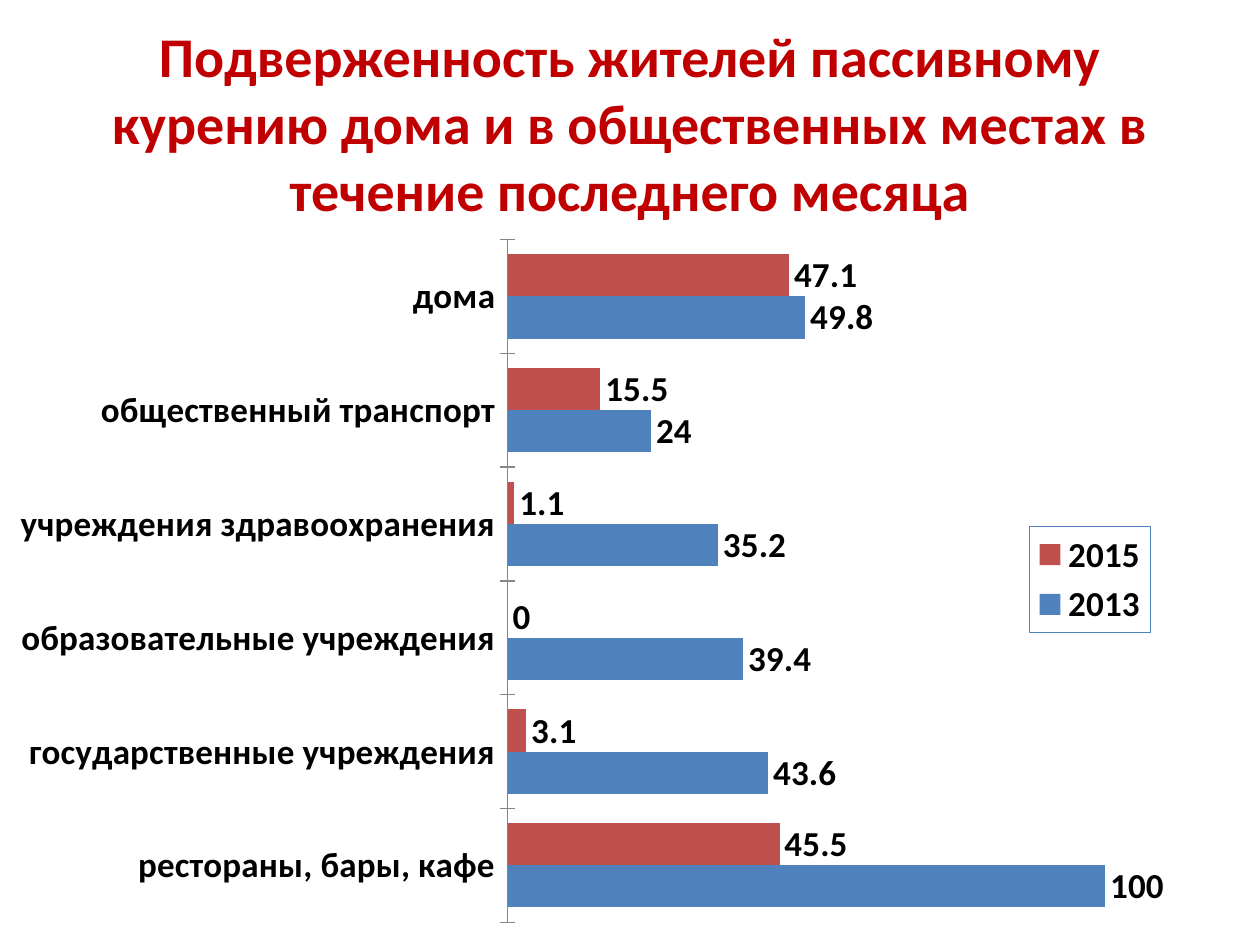
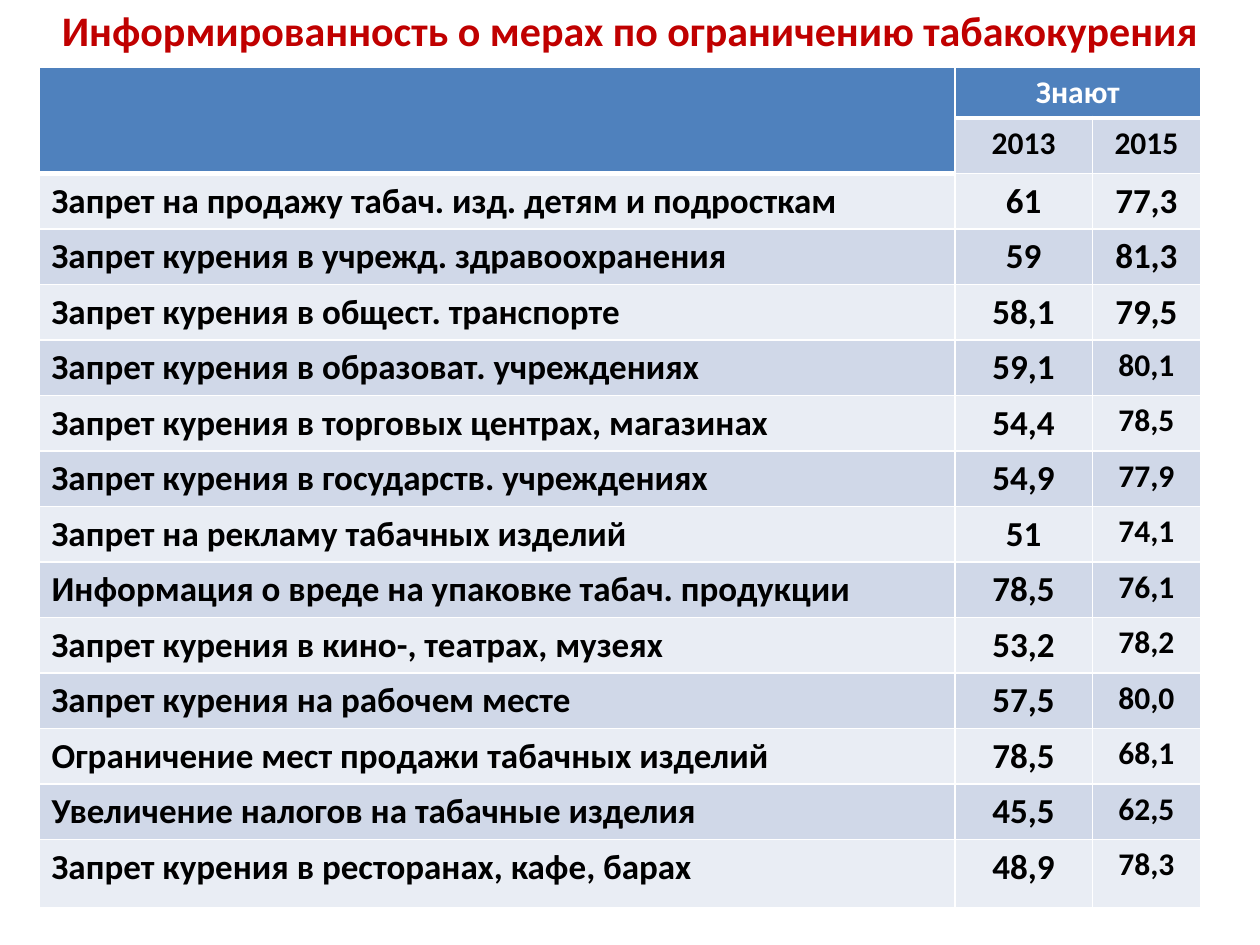
from lxml import etree
from pptx import Presentation
from pptx.chart.data import CategoryChartData
from pptx.dml.color import RGBColor
from pptx.enum import chart as ch, text
from pptx.oxml import parse_xml
from pptx.oxml.ns import nsdecls, qn
from pptx.util import Pt

COLORS = {"title": "C00000", "text": "000000", "white": "FFFFFF", "blue": "4F81BD",
          "red": "C0504D", "axis": "868686", "dark": "D0D8E8", "light": "E9EDF4"}
FONT = "Calibri"

PLACES = ["рестораны, бары, кафе", "государственные учреждения", "образовательные учреждения",
          "учреждения здравоохранения", "общественный транспорт", "дома"]
EXPOSURE = [("2013", "blue", [100, 43.6, 39.4, 35.2, 24, 49.8]),
            ("2015", "red", [45.5, 3.1, 0, 1.1, 15.5, 47.1])]

MEASURES = [
    ("Запрет на продажу табач. изд. детям и подросткам", "61", "77,3"),
    ("Запрет курения в учрежд. здравоохранения", "59", "81,3"),
    ("Запрет курения в общест. транспорте", "58,1", "79,5"),
    ("Запрет курения в образоват. учреждениях", "59,1", "80,1"),
    ("Запрет курения в торговых центрах, магазинах", "54,4", "78,5"),
    ("Запрет курения в государств. учреждениях", "54,9", "77,9"),
    ("Запрет на рекламу табачных изделий", "51", "74,1"),
    ("Информация о вреде на упаковке табач. продукции", "78,5", "76,1"),
    ("Запрет курения в кино-, театрах, музеях", "53,2", "78,2"),
    ("Запрет курения на рабочем месте", "57,5", "80,0"),
    ("Ограничение мест продажи табачных изделий", "78,5", "68,1"),
    ("Увеличение налогов на табачные изделия", "45,5", "62,5"),
    ("Запрет курения в ресторанах, кафе, барах", "48,9", "78,3"),
]
LARGE_2015_ROWS = 3


def rgb(name):
    """Return a palette colour."""
    return RGBColor.from_string(COLORS[name])


def style_font(font, size, color):
    """Apply the bold deck font."""
    font.name, font.size, font.bold = FONT, Pt(size), True
    font.color.rgb = rgb(color)


def write(tf, content, size, color, align):
    """Write one styled run into a text frame."""
    p = tf.paragraphs[0]
    p.alignment = align
    r = p.add_run()
    r.text = content
    style_font(r.font, size, color)


def add_titled_slide(prs, title, box, size):
    """Add a title-only slide with its title placed in the box."""
    s = prs.slides.add_slide(prs.slide_layouts[5])
    sp = s.shapes.title
    sp.left, sp.top, sp.width, sp.height = (Pt(v) for v in box)
    tf = sp.text_frame
    tf.word_wrap = True
    tf.auto_size = text.MSO_AUTO_SIZE.NONE
    tf.vertical_anchor = text.MSO_ANCHOR.MIDDLE
    write(tf, title, size, "title", text.PP_ALIGN.CENTER)
    return s


def manual_layout(x, y, w, h, inner=False):
    """Build a manual chart layout from fractions of the chart."""
    target = '<c:layoutTarget val="inner"/>' if inner else ""
    return parse_xml(
        f'<c:layout {nsdecls("c")}><c:manualLayout>{target}'
        '<c:xMode val="edge"/><c:yMode val="edge"/>'
        f'<c:x val="{x}"/><c:y val="{y}"/><c:w val="{w}"/><c:h val="{h}"/>'
        '</c:manualLayout></c:layout>')


def drop_layout(element):
    """Remove the automatic layout of a chart part."""
    for old in element.findall(qn("c:layout")):
        element.remove(old)


def format_legend(chart):
    """Place and frame the legend inside the plot."""
    chart.has_legend = True
    legend = chart.legend
    legend.position = ch.XL_LEGEND_POSITION.RIGHT
    legend.include_in_layout = False
    style_font(legend.font, 20, "text")
    el = legend._element
    drop_layout(el)
    el.find(qn("c:legendPos")).addnext(manual_layout(0.817, 0.425, 0.096, 0.146))
    el.find(qn("c:txPr")).addprevious(parse_xml(
        f'<c:spPr {nsdecls("c", "a")}><a:ln w="9525"><a:solidFill>'
        f'<a:srgbClr val="{COLORS["blue"]}"/></a:solidFill></a:ln></c:spPr>'))


def add_exposure_chart(s, box):
    """Add the clustered bars comparing both years."""
    data = CategoryChartData()
    data.categories = PLACES
    for name, _, values in EXPOSURE:
        data.add_series(name, values)
    chart = s.shapes.add_chart(ch.XL_CHART_TYPE.BAR_CLUSTERED, *(Pt(v) for v in box), data).chart
    chart.has_title = False
    style_font(chart.font, 20, "text")
    plot = chart.plots[0]
    plot.gap_width, plot.overlap, plot.vary_by_categories = 70, 0, False
    plot.has_data_labels = True
    labels = plot.data_labels
    labels.show_value = True
    labels.position = ch.XL_LABEL_POSITION.OUTSIDE_END
    style_font(labels.font, 20, "text")
    for series, (_, color, _) in zip(plot.series, EXPOSURE):
        series.invert_if_negative = False
        series.format.fill.solid()
        series.format.fill.fore_color.rgb = rgb(color)
    axis = chart.category_axis
    axis.major_tick_mark = ch.XL_TICK_MARK.CROSS
    axis.format.line.color.rgb = rgb("axis")
    style_font(axis.tick_labels.font, 20, "text")
    values = chart.value_axis
    values.visible = values.has_major_gridlines = False
    values.minimum_scale, values.maximum_scale = 0, 120
    format_legend(chart)
    area = chart._chartSpace.chart.plotArea
    drop_layout(area)
    area.insert(0, manual_layout(0.403, 0.031, 0.569, 0.938, inner=True))


def paint_cell(cell, fill, bottom=1):
    """Give a cell white borders and a fill."""
    tc_pr = cell._tc.get_or_add_tcPr()
    for side, width in zip("LRTB", (1, 1, 1, bottom)):
        ln = etree.SubElement(tc_pr, qn(f"a:ln{side}"), w=str(Pt(width)))
        solid = etree.SubElement(ln, qn("a:solidFill"))
        etree.SubElement(solid, qn("a:srgbClr"), val=COLORS["white"])
    cell.fill.solid()
    cell.fill.fore_color.rgb = rgb(fill)


def add_measures_table(s, box):
    """Add the table of measures with its two-level header."""
    n = len(MEASURES) + 2
    tbl = s.shapes.add_table(n, 3, *(Pt(v) for v in box)).table
    for col, width in zip(tbl.columns, (523.4, 78.5, 61.9)):
        col.width = Pt(width)
    for row, height in zip(tbl.rows, [28.8] + [31.7] * (n - 2) + [38.9]):
        row.height = Pt(height)
    for i in range(n):
        for j in range(3):
            header = i == 0 or (i == 1 and j == 0)
            fill = "blue" if header else "dark" if i % 2 else "light"
            paint_cell(tbl.cell(i, j), fill, 3 if header else 1)
    tbl.cell(0, 0).merge(tbl.cell(1, 0))
    tbl.cell(0, 1).merge(tbl.cell(0, 2))
    center = text.PP_ALIGN.CENTER
    write(tbl.cell(0, 1).text_frame, "Знают", 18, "white", center)
    for j, year in enumerate(("2013", "2015"), 1):
        write(tbl.cell(1, j).text_frame, year, 18, "text", center)
    for i, measure in enumerate(MEASURES):
        sizes = (20, 20, 20 if i < LARGE_2015_ROWS else 18)
        for j, (content, size) in enumerate(zip(measure, sizes)):
            align = center if j else text.PP_ALIGN.LEFT
            write(tbl.cell(i + 2, j).text_frame, content, size, "text", align)


def main():
    """Build both slides and save the deck."""
    prs = Presentation()
    prs.slide_width, prs.slide_height = Pt(720), Pt(540)
    s = add_titled_slide(prs, "Подверженность жителей пассивному курению дома и в "
                         "общественных местах в течение последнего месяца",
                         (36, 16.5, 648, 106.5), 32)
    add_exposure_chart(s, (0, 124, 720, 416))
    s = add_titled_slide(prs, "Информированность о мерах по ограничению табакокурения",
                         (0, 0, 720, 34), 24)
    add_measures_table(s, (22.3, 38.2, 663.8, 471))
    prs.save("out.pptx")


if __name__ == "__main__":
    main()
